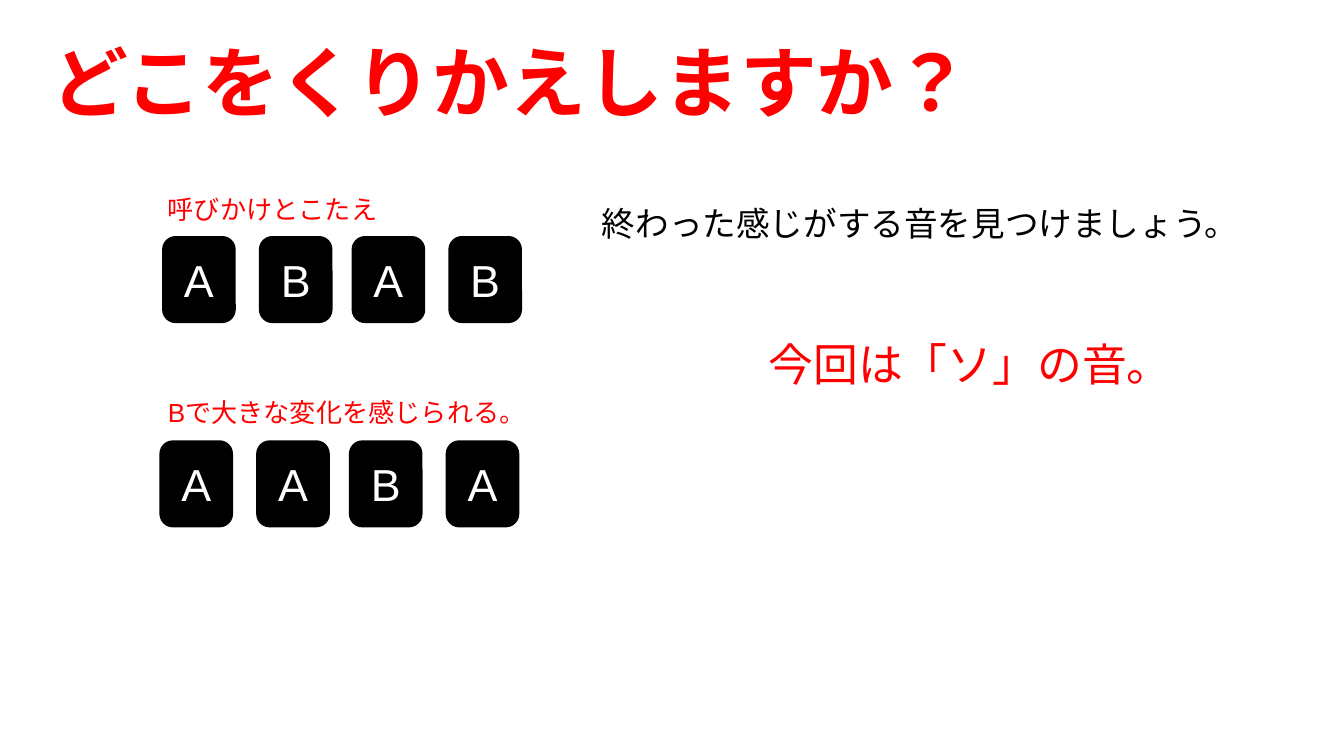
from pptx import Presentation
from pptx.dml.color import RGBColor
from pptx.enum.lang import MSO_LANGUAGE_ID
from pptx.enum.shapes import MSO_SHAPE
from pptx.enum.text import MSO_ANCHOR, MSO_AUTO_SIZE, PP_ALIGN
from pptx.util import Inches, Pt

RED, BLACK, WHITE = "FF0000", "000000", "FFFFFF"


def rgb(value):
    return RGBColor.from_string(value)


def write(shape, text, size, color, align=PP_ALIGN.LEFT, anchor=MSO_ANCHOR.TOP):
    frame = shape.text_frame
    frame.text = text
    frame.word_wrap = True
    frame.auto_size = MSO_AUTO_SIZE.NONE
    frame.vertical_anchor = anchor
    paragraph = frame.paragraphs[0]
    paragraph.alignment = align
    paragraph.font.name = "Arial"
    paragraph.font.size = Pt(size)
    paragraph.font.color.rgb = rgb(color)
    paragraph.runs[0].font.language_id = MSO_LANGUAGE_ID.JAPANESE
    return frame


prs = Presentation()
prs.slide_width = Inches(10)
prs.slide_height = prs.slide_width * 9 // 16
slide = prs.slides.add_slide(prs.slide_layouts[5])

# Heading
title = slide.shapes.title
title.left, title.top = Inches(0.28), Inches(0.16)
title.width, title.height = Inches(9.65), Inches(1.1)
heading = write(title, "どこをくりかえしますか？", 41.2, RED)
heading.paragraphs[0].font.bold = True
heading.margin_left = heading.margin_right = Inches(0.1)
heading.margin_top = heading.margin_bottom = Inches(0.1)

# Song forms: a caption above a row of section cards
song_forms = [
    ("Bで大きな変化を感じられる。", 2.9, "AABA", 1.2, 3.29),
    ("呼びかけとこたえ", 1.39, "ABAB", 1.22, 1.77),
]
card_offsets = [0, 0.72, 1.41, 2.13]
for caption, caption_top, sections, cards_left, cards_top in song_forms:
    form = slide.shapes.add_group_shape()
    for section, offset in zip(sections, card_offsets):
        card = form.shapes.add_shape(
            MSO_SHAPE.ROUNDED_RECTANGLE,
            Inches(cards_left + offset), Inches(cards_top), Inches(0.52), Inches(0.62))
        card.shadow.inherit = False
        card.fill.solid()
        card.fill.fore_color.rgb = rgb(BLACK)
        card.line.color.rgb = rgb(BLACK)
        card.line.width = Pt(2)
        write(card, section, 24, WHITE, PP_ALIGN.CENTER, MSO_ANCHOR.MIDDLE)
    label = form.shapes.add_textbox(
        Inches(1.15), Inches(caption_top), Inches(3.82), Inches(0.34))
    write(label, caption, 14, RED)

# Task and answer
for text, size, color, left, top, width, height in [
    ("終わった感じがする音を見つけましょう。", 18, BLACK, 4.38, 1.46, 4.98, 0.4),
    ("今回は「ソ」の音。", 24, RED, 5.62, 2.46, 3.93, 0.5),
]:
    note = slide.shapes.add_textbox(Inches(left), Inches(top), Inches(width), Inches(height))
    write(note, text, size, color)

prs.save("out.pptx")
